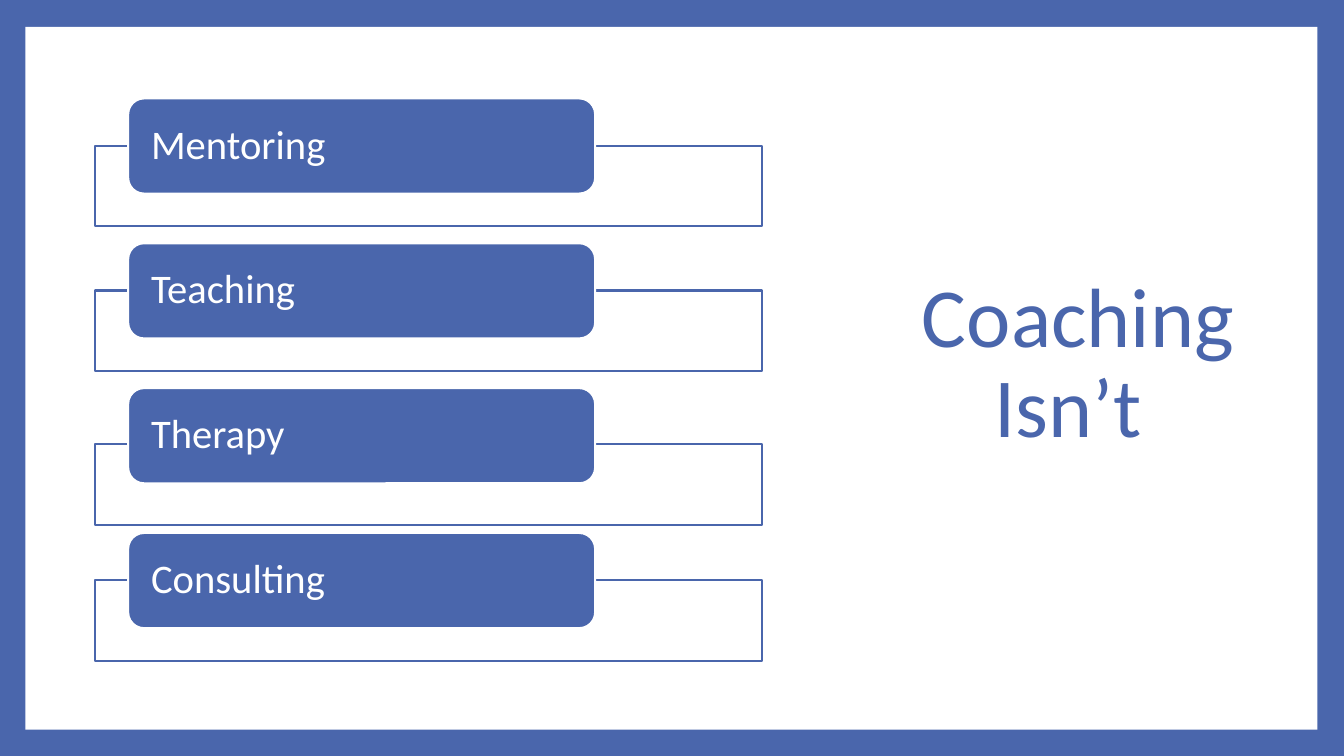
from lxml import etree
from pptx import Presentation
from pptx.dml.color import RGBColor
from pptx.enum import shapes, text
from pptx.oxml import ns
from pptx.util import Cm, Pt

TITLE = "Coaching Isn’t "
# Each practice with the drop from the top of its label to the top of its frame
PRACTICES = [
    ("Mentoring", 1.19),
    ("Teaching", 1.19),
    ("Therapy", 1.42),
    ("Consulting", 1.19),
]
BLUE, WHITE = "4A66AC", "FFFFFF"
FIRST_TOP, PITCH = 2.48, 3.65
FRAME_LEFT, FRAME_WIDTH, FRAME_HEIGHT = 2.39, 16.82, 2.03
LABEL_LEFT, LABEL_WIDTH, LABEL_HEIGHT = 3.23, 11.77, 2.4


def color(hex_value):
    return RGBColor.from_string(hex_value)


def add_box(slide, kind, left, top, width, height, fill, line=None, opacity=100):
    box = slide.shapes.add_shape(kind, Cm(left), Cm(top), Cm(width), Cm(height))
    box.shadow.inherit = False
    box.fill.solid()
    box.fill.fore_color.rgb = color(fill)
    if opacity < 100:
        fill_color = box.fill._xPr.find(".//" + ns.qn("a:srgbClr"))
        etree.SubElement(fill_color, ns.qn("a:alpha"), val=str(opacity * 1000))
    if line:
        box.line.color.rgb = color(line)
        box.line.width = Pt(1.5)
    else:
        box.line.fill.background()
    return box


def write(shape, words, size, ink, align, side_margin=0.25, end_margin=0.13):
    frame = shape.text_frame
    frame.word_wrap = True
    frame.vertical_anchor = text.MSO_ANCHOR.MIDDLE
    frame.margin_left = frame.margin_right = Cm(side_margin)
    frame.margin_top = frame.margin_bottom = Cm(end_margin)
    paragraph = frame.paragraphs[0]
    paragraph.alignment = align
    paragraph.line_spacing = 0.9
    run = paragraph.add_run()
    run.text = words
    run.font.name = "Calibri"
    run.font.size = Pt(size)
    run.font.color.rgb = color(ink)


def main():
    deck = Presentation()
    deck.slide_width, deck.slide_height = Cm(33.87), Cm(19.05)
    slide = deck.slides.add_slide(deck.slide_layouts[6])
    slide.background.fill.solid()
    slide.background.fill.fore_color.rgb = color(BLUE)

    preset = shapes.MSO_SHAPE
    add_box(slide, preset.RECTANGLE, 0.64, 0.68, 32.56, 17.71, WHITE)
    title = slide.shapes.add_textbox(Cm(22.2), Cm(1.7), Cm(9.93), Cm(15.01))
    write(title, TITLE, 60, BLUE, text.PP_ALIGN.CENTER)

    for row, (practice, drop) in enumerate(PRACTICES):
        top = FIRST_TOP + row * PITCH
        add_box(slide, preset.RECTANGLE, FRAME_LEFT, top + drop,
                FRAME_WIDTH, FRAME_HEIGHT, WHITE, BLUE, opacity=90)
        label = add_box(slide, preset.ROUNDED_RECTANGLE, LABEL_LEFT, top,
                        LABEL_WIDTH, LABEL_HEIGHT, BLUE, WHITE)
        write(label, practice, 29, WHITE, text.PP_ALIGN.LEFT,
              side_margin=0.46, end_margin=0)

    deck.save("out.pptx")


if __name__ == "__main__":
    main()
